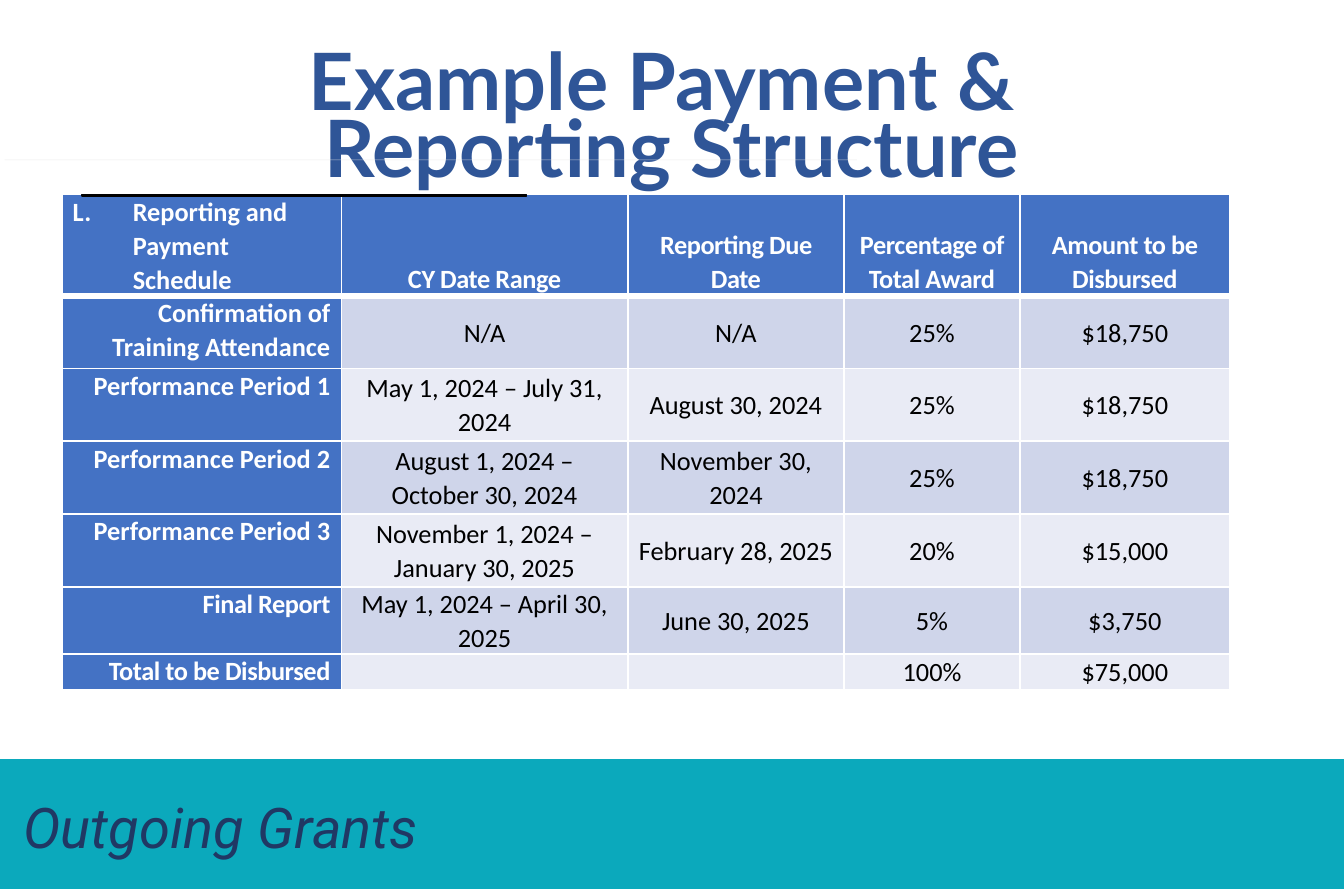
from lxml import etree
from pptx import Presentation
from pptx.dml.color import RGBColor
from pptx.enum import shapes, text
from pptx.oxml import ns
from pptx.util import Inches, Pt

WHITE = RGBColor(0xFF, 0xFF, 0xFF)
BLACK = RGBColor(0, 0, 0)
TEAL = RGBColor(0x0B, 0xA9, 0xBC)
NAVY = RGBColor(0x20, 0x38, 0x64)
TITLE_BLUE = RGBColor(0x2F, 0x55, 0x97)
HEADER_BLUE = RGBColor(0x44, 0x72, 0xC4)
RULE_GRAY = RGBColor(0xE7, 0xE6, 0xE6)
BANDS = (RGBColor(0xE9, 0xEB, 0xF5), RGBColor(0xCF, 0xD5, 0xEA))

COLUMN_WIDTHS = (1.77, 1.81, 1.37, 1.11, 1.33)
ROW_HEIGHTS = (0.64, 0.46, 0.46, 0.46, 0.46, 0.23, 0.23)
SCHEDULE = (
    ("Reporting and Payment Schedule", "CY Date Range", "Reporting Due Date",
     "Percentage of Total Award", "Amount to be Disbursed"),
    ("Confirmation of Training Attendance", "N/A", "N/A", "25%", "$18,750"),
    ("Performance Period 1", "May 1, 2024 – July 31, 2024",
     "August 30, 2024", "25%", "$18,750"),
    ("Performance Period 2", "August 1, 2024 – October 30, 2024",
     "November 30, 2024", "25%", "$18,750"),
    ("Performance Period 3", "November 1, 2024 – January 30, 2025",
     "February 28, 2025", "20%", "$15,000"),
    ("Final Report", "May 1, 2024 – April 30, 2025", "June 30, 2025", "5%", "$3,750"),
    ("Total to be Disbursed", "", "", "100%", "$75,000"),
)


def add_xml(parent, tag, **attributes):
    """Append a DrawingML element to a parent and return it."""
    return etree.SubElement(parent, ns.qn(tag), attributes)


def write_text(paragraph, words, font="Calibri", size=12, color=BLACK, bold=False,
               italic=False, align=text.PP_ALIGN.LEFT, line_spacing=None, tracking=0):
    """Write formatted words into a paragraph."""
    paragraph.alignment = align
    if line_spacing:
        paragraph.line_spacing = line_spacing
    if not words:
        add_xml(paragraph._p, "a:endParaRPr", sz=str(size * 100))
        return
    run = paragraph.add_run()
    run.text = words
    run.font.name = font
    run.font.size = Pt(size)
    run.font.bold = bold
    run.font.italic = italic
    run.font.color.rgb = color
    if tracking:
        run._r.get_or_add_rPr().set("spc", str(tracking))


def add_rule(slide, left, top, width, color, weight, opacity=100):
    """Draw a horizontal line."""
    line = slide.shapes.add_connector(
        shapes.MSO_CONNECTOR.STRAIGHT, Inches(left), Inches(top),
        Inches(left + width), Inches(top))
    line.line.color.rgb = color
    line.line.width = Pt(weight)
    properties = line._element.spPr
    if opacity < 100:
        add_xml(properties.find(".//" + ns.qn("a:srgbClr")), "a:alpha",
                val=str(opacity * 1000))
    add_xml(properties, "a:effectLst")


def add_footer(slide, left, top, width, height):
    """Draw the teal band with the section name."""
    add_rule(slide, left, top + height / 2, width, TEAL, height * 72)
    label = slide.shapes.add_textbox(
        Inches(left + 0.05), Inches(top + 0.16), Inches(3.56), Inches(0.53))
    label.text_frame.word_wrap = True
    write_text(label.text_frame.paragraphs[0], "Outgoing Grants", font="Roboto",
               size=25.5, color=NAVY, italic=True)


def add_title(slide, left, top, width, height):
    """Place the two-line title and the faint rule across it."""
    title = slide.shapes.title
    title.left, title.top = Inches(left), Inches(top)
    title.width, title.height = Inches(width), Inches(height)
    frame = title.text_frame
    frame.word_wrap = True
    frame.auto_size = text.MSO_AUTO_SIZE.NONE
    frame.vertical_anchor = text.MSO_ANCHOR.MIDDLE
    frame.margin_left = frame.margin_right = frame.margin_top = frame.margin_bottom = 0
    for paragraph, words in ((frame.paragraphs[0], "Example Payment & "),
                             (frame.add_paragraph(), "Reporting Structure")):
        write_text(paragraph, words, font="Lato", size=36, color=TITLE_BLUE, bold=True,
                   align=text.PP_ALIGN.CENTER, line_spacing=0.7)
    add_rule(slide, left - 0.36, top + 0.62, 5.39, RULE_GRAY, 0.5, opacity=25)


def style_cell(cell, fill, anchor, bottom_weight):
    """Set a cell's margins, anchor, white borders and fill."""
    cell.margin_left = cell.margin_right = Inches(0.07)
    cell.margin_top = cell.margin_bottom = 0
    cell.vertical_anchor = anchor
    properties = cell._tc.get_or_add_tcPr()
    for side, weight in (("L", 1), ("R", 1), ("T", 1), ("B", bottom_weight)):
        border = add_xml(properties, "a:ln" + side, w=str(Pt(weight)))
        add_xml(add_xml(border, "a:solidFill"), "a:srgbClr", val=str(WHITE))
    cell.fill.solid()
    cell.fill.fore_color.rgb = fill


def add_schedule(slide, left, top, width, height):
    """Build the payment schedule table and the thin bar on its top edge."""
    table = slide.shapes.add_table(
        len(ROW_HEIGHTS), len(COLUMN_WIDTHS), Inches(left), Inches(top),
        Inches(width), Inches(height)).table
    for column, column_width in zip(table.columns, COLUMN_WIDTHS):
        column.width = Inches(column_width)
    for row, row_height in zip(table.rows, ROW_HEIGHTS):
        row.height = Inches(row_height)
    for r, values in enumerate(SCHEDULE):
        for c, words in enumerate(values):
            cell = table.cell(r, c)
            heading = r == 0 or c == 0
            anchor, align = text.MSO_ANCHOR.MIDDLE, text.PP_ALIGN.CENTER
            if r == 0:
                anchor = text.MSO_ANCHOR.BOTTOM
            elif c == 0:
                anchor, align = text.MSO_ANCHOR.TOP, text.PP_ALIGN.RIGHT
            if r == c == 0:
                align = text.PP_ALIGN.LEFT
            style_cell(cell, HEADER_BLUE if heading else BANDS[r % 2], anchor,
                       3 if r == 0 else 1)
            tight = (r == 0 and c > 0) or (c == 0 and r > 4)
            write_text(cell.text_frame.paragraphs[0], words,
                       color=WHITE if heading else BLACK, bold=heading, align=align,
                       line_spacing=1.06, tracking=-20 if tight else 0)
    number = table.cell(0, 0).text_frame.paragraphs[0]._p.get_or_add_pPr()
    number.set("marL", str(Inches(0.38)))
    number.set("indent", str(Inches(-0.38)))
    add_xml(number, "a:buAutoNum", type="alphaUcPeriod", startAt="12")

    bar = slide.shapes.add_shape(shapes.MSO_SHAPE.RECTANGLE, Inches(left + 0.13),
                                 Inches(top), Inches(2.81), Inches(0.01))
    bar.shadow.inherit = False
    bar.fill.solid()
    bar.fill.fore_color.rgb = BLACK
    bar.line.color.rgb = BLACK
    bar.line.width = Pt(0.75)


def main():
    """Build the slide and save it."""
    presentation = Presentation()
    presentation.slide_width, presentation.slide_height = Inches(8.5), Inches(5.62)
    slide = presentation.slides.add_slide(presentation.slide_layouts[5])
    add_footer(slide, 0, 4.8, 8.5, 0.83)
    add_title(slide, 0.39, 0.39, 7.71, 0.79)
    add_schedule(slide, 0.39, 1.23, sum(COLUMN_WIDTHS), sum(ROW_HEIGHTS))
    presentation.save("out.pptx")


if __name__ == "__main__":
    main()
